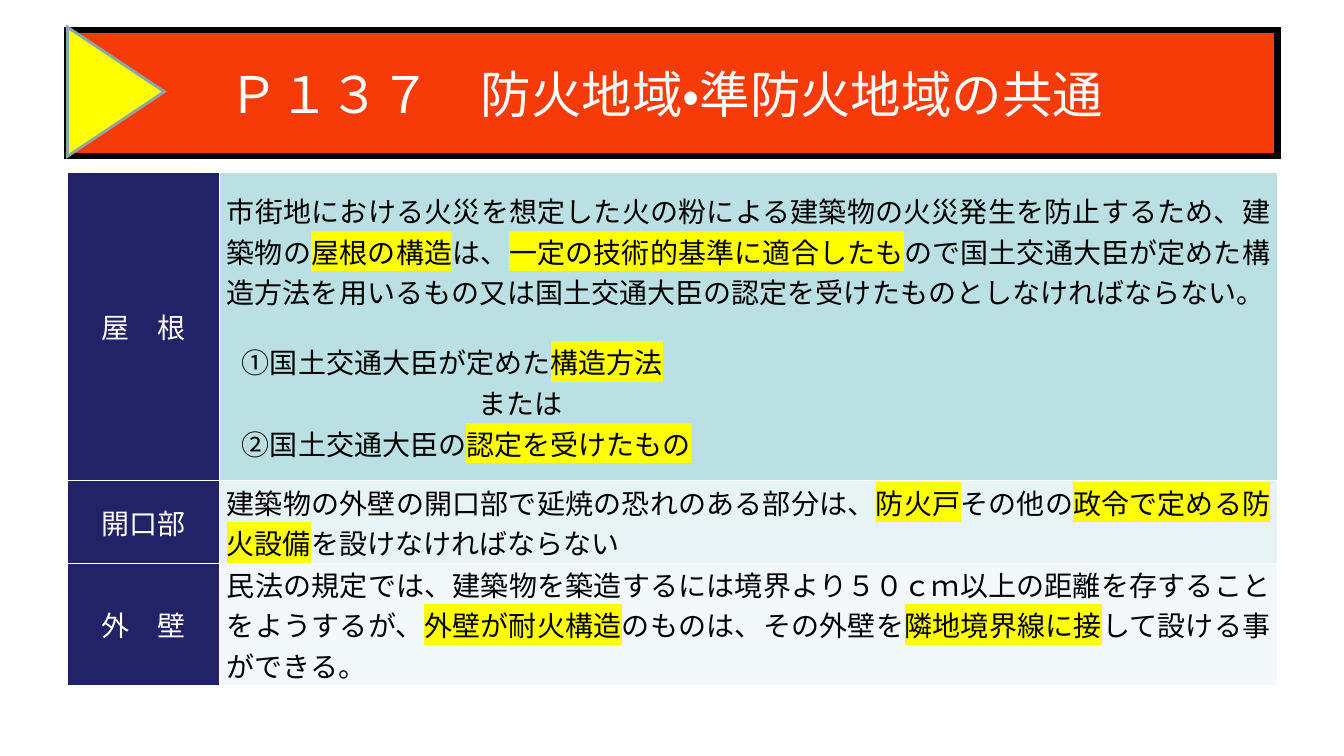
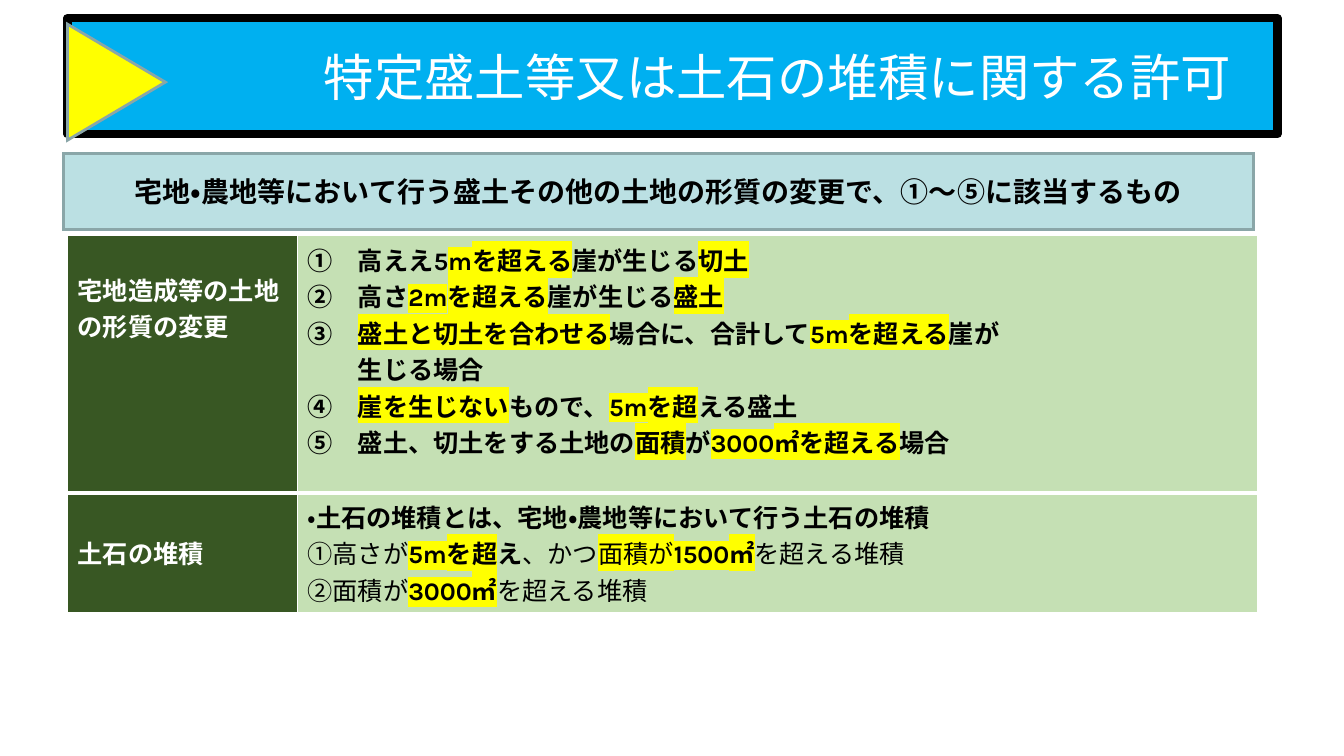
from dataclasses import dataclass

from lxml.etree import SubElement
from pptx import Presentation
from pptx.dml.color import RGBColor
from pptx.enum.lang import MSO_LANGUAGE_ID
from pptx.enum.shapes import MSO_SHAPE
from pptx.enum.text import MSO_ANCHOR, PP_ALIGN
from pptx.oxml.ns import qn
from pptx.util import Inches, Pt

LEFT, CENTER, JUST = PP_ALIGN.LEFT, PP_ALIGN.CENTER, PP_ALIGN.JUSTIFY
TOP, MIDDLE = MSO_ANCHOR.TOP, MSO_ANCHOR.MIDDLE
RECT, WEDGE = MSO_SHAPE.RECTANGLE, MSO_SHAPE.ISOSCELES_TRIANGLE
JAPANESE = MSO_LANGUAGE_ID.JAPANESE


@dataclass(frozen=True)
class Theme:
    white: str = "FFFFFF"
    black: str = "000000"
    yellow: str = "FFFF00"
    edge: str = "8AA6A8"
    red: str = "F63B08"
    sky: str = "00B0F0"
    navy: str = "222267"
    aqua: str = "BBE0E3"
    mist: str = "E7F3F4"
    pale: str = "F3F9FA"
    forest: str = "385723"
    leaf: str = "C5E0B4"
    sans: str = "Arial"
    karla: str = "Karla"
    head: int = 36
    body: int = 20
    small: int = 18


@dataclass(frozen=True)
class Line:
    """One paragraph: '|' toggles the highlight, '*' toggles bold."""
    text: str
    indent: float = 0
    before: float = 0
    align: PP_ALIGN = None


T = Theme()


def color(code):
    return RGBColor.from_string(code)


def add_run(para, text, size, ink, font, bold, mark):
    run = para.add_run()
    run.text = text
    run.font.size, run.font.bold = Pt(size), bold
    run.font.language_id = JAPANESE
    run.font.color.rgb = color(ink)
    if mark:
        light = SubElement(run.font._element, qn("a:highlight"))
        SubElement(light, qn("a:srgbClr"), val=T.yellow)
    run.font.name = font


def write(frame, lines, size=T.body, ink=T.black, font=T.sans, bold=False,
          align=LEFT, space=None, tab=None):
    frame.word_wrap = True
    for num, line in enumerate(lines):
        para = frame.add_paragraph() if num else frame.paragraphs[0]
        para.alignment = line.align or align
        if space:
            para.line_spacing = space
        if line.before:
            para.space_before = Pt(line.before)
        props = para._p.get_or_add_pPr()
        props.set("marL", str(Inches(line.indent)))
        props.set("indent", "0")
        if tab:
            stops = SubElement(props, qn("a:tabLst"))
            SubElement(stops, qn("a:tab"), pos=str(Inches(tab)), algn="l")
        heavy = bold
        for mark, chunk in enumerate(line.text.split("|")):
            for turn, part in enumerate(chunk.split("*")):
                if turn:
                    heavy = not heavy
                if part:
                    add_run(para, part, size, ink, font, heavy, mark % 2)


def add_box(slide, kind, box, fill, edge, width, join="miter"):
    shape = slide.shapes.add_shape(kind, *map(Inches, box))
    shape.shadow.inherit = False
    shape.fill.solid()
    shape.fill.fore_color.rgb = color(fill)
    shape.line.color.rgb = color(edge)
    shape.line.width = Pt(width)
    SubElement(shape._element.spPr.find(qn("a:ln")), qn("a:" + join))
    shape.text_frame.vertical_anchor = MIDDLE
    return shape


def add_title(slide, text, top, height, fill, width, inset, wedge,
              join="miter", tab=None):
    """Title band with a yellow pointer at its left end."""
    band = add_box(slide, RECT, (0.67, top, 12, height), fill, T.black, width, join)
    band.text_frame.margin_left = Inches(inset)
    write(band.text_frame, [Line(text)], size=T.head, ink=T.white, tab=tab)
    add_box(slide, WEDGE, wedge, T.yellow, T.edge, 2).rotation = 90


def set_edges(cell, **widths):
    props = cell._tc.get_or_add_tcPr()
    for num, side in enumerate("LRTB"):
        line = props.makeelement(qn("a:ln" + side), {"w": str(Pt(widths.get(side, 1)))})
        fill = SubElement(line, qn("a:solidFill"))
        SubElement(fill, qn("a:srgbClr"), val=T.white)
        props.insert(num, line)


def add_grid(slide, top, cols, rows, fills, split, pads):
    """Two-column table; split is the width of the rule below its first row."""
    box = 0.67, top, sum(cols), sum(rows)
    table = slide.shapes.add_table(len(rows), len(cols), *map(Inches, box)).table
    table.first_row = table.horz_banding = False
    for col, width in zip(table.columns, cols):
        col.width = Inches(width)
    for num, (row, height) in enumerate(zip(table.rows, rows)):
        row.height = Inches(height)
        for cell, fill in zip(row.cells, fills[num]):
            cell.fill.solid()
            cell.fill.fore_color.rgb = color(fill)
            cell.margin_left = cell.margin_right = Inches(pads[0])
            cell.margin_top = cell.margin_bottom = Inches(pads[1])
            set_edges(cell, T=split if num == 1 else 1, B=split if num == 0 else 1)
    return table


def build_zones(slide):
    add_title(slide, "Ｐ１３７\t防火地域・準防火地域の共通", 0.3, 1.25, T.red, 4.5,
              1.6, (0.51, 0.43, 1.28, 0.96), tab=3)
    rows = [
        ("屋　根", [
            Line("市街地における火災を想定した火の粉による建築物の火災発生を防止するため、"
                 "建築物の|屋根の構造|は、|一定の技術的基準に適合したも|ので国土交通大臣が"
                 "定めた構造方法を用いるもの又は国土交通大臣の認定を受けたものと"
                 "しなければならない。"),
            Line("①国土交通大臣が定めた|構造方法", 0.15, 21),
            Line("または", 2.5),
            Line("②国土交通大臣の|認定を受けたもの", 0.15)]),
        ("開口部", [
            Line("建築物の外壁の開口部で延焼の恐れのある部分は、|防火戸|その他の"
                 "|政令で定める防火設備|を設けなければならない")]),
        ("外　壁", [
            Line("民法の規定では、建築物を築造するには境界より５０ｃｍ以上の距離を存すること"
                 "をようするが、|外壁が耐火構造|のものは、その外壁を|隣地境界線に接|して"
                 "設ける事ができる。")]),
    ]
    fills = [(T.navy, fill) for fill in (T.aqua, T.mist, T.pale)]
    table = add_grid(slide, 1.71, (1.51, 10.49), (3.06, 0.82, 1.18), fills, 1, (0.07, 0))
    for row, (name, lines) in zip(table.rows, rows):
        label, text = row.cells
        label.vertical_anchor = text.vertical_anchor = MIDDLE
        write(label.text_frame, [Line(name)], ink=T.white, align=CENTER)
        write(text.text_frame, lines, align=JUST)


def build_permit(slide):
    add_title(slide, "特定盛土等又は土石の堆積に関する許可", 0.18, 1.15, T.sky, 6,
              2.54, (0.58, 0.33, 1.15, 0.97), join="round")
    rows = [
        ("宅地造成等の土地の形質の変更", None, True, [
            Line("①　高ええ5|mを超える|崖が生じる|切土"),
            Line("②　高さ|2mを超える|崖が生じる|盛土"),
            Line("③　|盛土と切土を合わせる|場合に、合計して|5mを超える|崖が"),
            Line("生じる場合", 0.5),
            Line("④　|崖を生じない|もので、|5mを超|える盛土"),
            Line("⑤　盛土、切土をする土地の|面積|が|3000㎡を超える|場合")]),
        ("土石の堆積", 2, False, [
            Line("・*土石の堆積とは、宅地・農地等において行う土石の堆積"),
            Line("①高さが|*5mを超|え*、かつ|面積が*1500㎡*|を超える堆積"),
            Line("②面積が|*3000㎡*|を超える堆積")]),
    ]
    table = add_grid(slide, 2.34, (2.28, 9.52), (2.55, 1.16),
                     [(T.forest, T.leaf)] * 2, 3, (0.1, 0.05))
    for row, (name, space, bold, lines) in zip(table.rows, rows):
        label, text = row.cells
        label.vertical_anchor = text.vertical_anchor = TOP
        write(label.text_frame, [Line(name)], size=T.small, ink=T.white,
              font=T.karla, bold=True, space=space)
        write(text.text_frame, lines, size=T.small, font=T.karla, bold=bold)
    table.cell(0, 0).margin_top = Inches(0.35)
    note = add_box(slide, RECT, (0.63, 1.52, 11.8, 0.76), T.aqua, T.edge, 2)
    write(note.text_frame,
          [Line("宅地・農地等において行う盛土その他の土地の形質の変更で、①～⑤に該当するもの")],
          bold=True, align=CENTER)


def main():
    deck = Presentation()
    deck.slide_width, deck.slide_height = Inches(13.33), Inches(7.5)
    for build in (build_zones, build_permit):
        build(deck.slides.add_slide(deck.slide_layouts[6]))
    deck.save("out.pptx")


if __name__ == "__main__":
    main()
